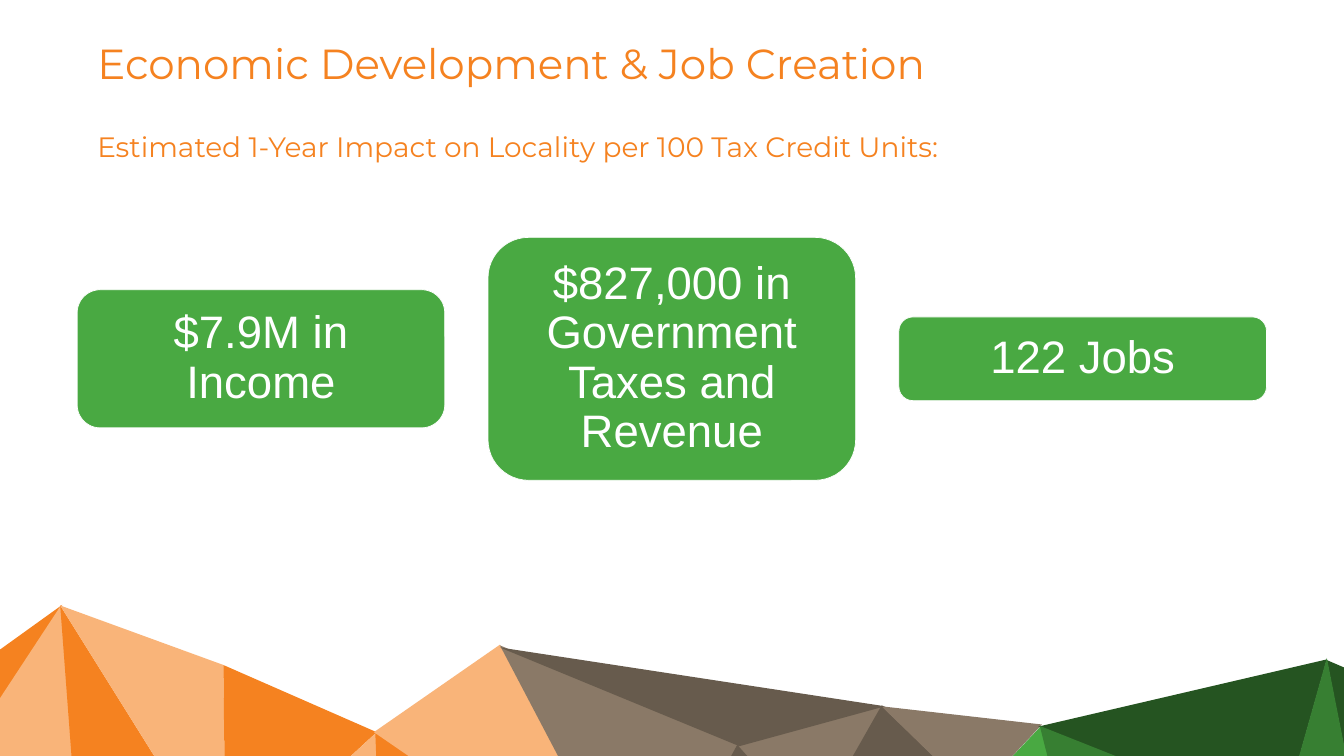
from pptx import Presentation
from pptx.dml.color import RGBColor
from pptx.enum.shapes import MSO_SHAPE
from pptx.enum.text import MSO_ANCHOR, PP_ALIGN
from pptx.util import Pt

ROUNDED = MSO_SHAPE.ROUNDED_RECTANGLE
TOP, MIDDLE = MSO_ANCHOR.TOP, MSO_ANCHOR.MIDDLE
CENTER = PP_ALIGN.CENTER

WHITE = RGBColor(0xFF, 0xFF, 0xFF)
ORANGE = RGBColor(0xF5, 0x82, 0x20)
PEACH = RGBColor(0xF9, 0xB4, 0x79)
TAUPE = RGBColor(0x8A, 0x79, 0x67)
BROWN = RGBColor(0x67, 0x5B, 0x4D)
GREEN = RGBColor(0x49, 0xA9, 0x42)
MID_GREEN = RGBColor(0x37, 0x7F, 0x32)
DARK_GREEN = RGBColor(0x25, 0x54, 0x21)

# Mountain facets, back to front: colour and corners in points
FACETS = [
    (ORANGE, [(89, 864), (0, 928), (0, 999)]),
    (PEACH, [(113, 1198), (87, 865), (-1, 999), (-1, 1198)]),
    (ORANGE, [(294, 1198), (86, 865), (111, 1198)]),
    (PEACH, [(322, 1198), (319, 950), (86, 865), (294, 1198)]),
    (ORANGE, [(373, 1198), (538, 1046), (319, 950), (322, 1198)]),
    (PEACH, [(544, 1198), (538, 1046), (373, 1198)]),
    (ORANGE, [(757, 1198), (536, 1046), (542, 1198)]),
    (PEACH, [(860, 1198), (714, 921), (534, 1046), (755, 1198)]),
    (TAUPE, [(981, 1200), (1056, 1063), (714, 922), (860, 1200)]),
    (TAUPE, [(1052, 1065), (1159, 1186), (1261, 1008)]),
    (BROWN, [(1158, 1186), (1393, 1138), (1259, 1008)]),
    (TAUPE, [(1259, 1009), (1392, 1138), (1488, 1035)]),
    (GREEN, [(1529, 1203), (1487, 1037), (1390, 1140), (1460, 1203)]),
    (DARK_GREEN, [(1483, 1038), (1829, 1176), (1895, 942)]),
    (MID_GREEN, [(1758, 1203), (1830, 1174), (1485, 1037), (1527, 1203)]),
    (DARK_GREEN, [(1930, 958), (1895, 943), (1930, 1121)]),
    (MID_GREEN, [(1930, 1203), (1930, 1117), (1895, 940), (1829, 1174),
                 (1872, 1203)]),
    (BROWN, [(714, 925), (1264, 1009), (1056, 1066)]),
    (BROWN, [(1131, 1201), (1161, 1185), (1053, 1064), (978, 1201)]),
]

# Impact cards, left to right: text and height
CARDS = [
    ("$7.9M in Income", 197.3),
    ("$827,000 in Government Taxes and Revenue", 347),
    ("122 Jobs", 119.5),
]
CARD_LEFT, CARD_WIDTH, CARD_PITCH, CARD_MIDDLE = 110.2, 525, 586.8, 512.6
CARD_INSET = 19.5


def style_paragraph(paragraph, text, font_name, size, color):
    paragraph.text = text
    paragraph.line_spacing = 0.9
    paragraph.font.name = font_name
    paragraph.font.size = Pt(size)
    paragraph.font.color.rgb = color


def add_facet(slide, color, corners):
    outline = slide.shapes.build_freeform(*corners[0], scale=Pt(1))
    outline.add_line_segments(corners[1:], close=True)
    facet = outline.convert_to_shape()
    facet.shadow.inherit = False
    facet.fill.solid()
    facet.fill.fore_color.rgb = color
    facet.line.fill.background()


def add_heading(slide):
    heading = slide.shapes.add_textbox(Pt(131.8), Pt(57.6), Pt(1655.3), Pt(140.4))
    frame = heading.text_frame
    frame.word_wrap = True
    frame.vertical_anchor = TOP
    style_paragraph(frame.paragraphs[0], "Economic Development & Job Creation",
                    "Montserrat", 60, ORANGE)
    subtitle = frame.add_paragraph()
    style_paragraph(subtitle,
                    "Estimated 1-Year Impact on Locality per 100 Tax Credit Units:",
                    "Montserrat", 40, ORANGE)
    subtitle.space_before = Pt(64)


def add_card(slide, left, height, text):
    card = slide.shapes.add_shape(ROUNDED, Pt(left), Pt(CARD_MIDDLE - height / 2),
                                  Pt(CARD_WIDTH), Pt(height))
    card.shadow.inherit = False
    card.fill.solid()
    card.fill.fore_color.rgb = GREEN
    card.line.color.rgb = WHITE
    card.line.width = Pt(1)
    frame = card.text_frame
    frame.word_wrap = True
    frame.vertical_anchor = MIDDLE
    frame.margin_left = frame.margin_right = Pt(CARD_INSET)
    frame.margin_top = frame.margin_bottom = Pt(CARD_INSET)
    style_paragraph(frame.paragraphs[0], text, "Arial", 65, WHITE)
    frame.paragraphs[0].alignment = CENTER


def main():
    deck = Presentation()
    deck.slide_width, deck.slide_height = Pt(1919.52), Pt(1080)
    slide = deck.slides.add_slide(deck.slide_layouts[6])

    # Mountain range along the bottom
    for color, corners in FACETS:
        add_facet(slide, color, corners)

    # Cards share one width and one centre line
    for column, (text, height) in enumerate(CARDS):
        add_card(slide, CARD_LEFT + column * CARD_PITCH, height, text)

    # Title and subtitle
    add_heading(slide)
    deck.save("out.pptx")


if __name__ == "__main__":
    main()
